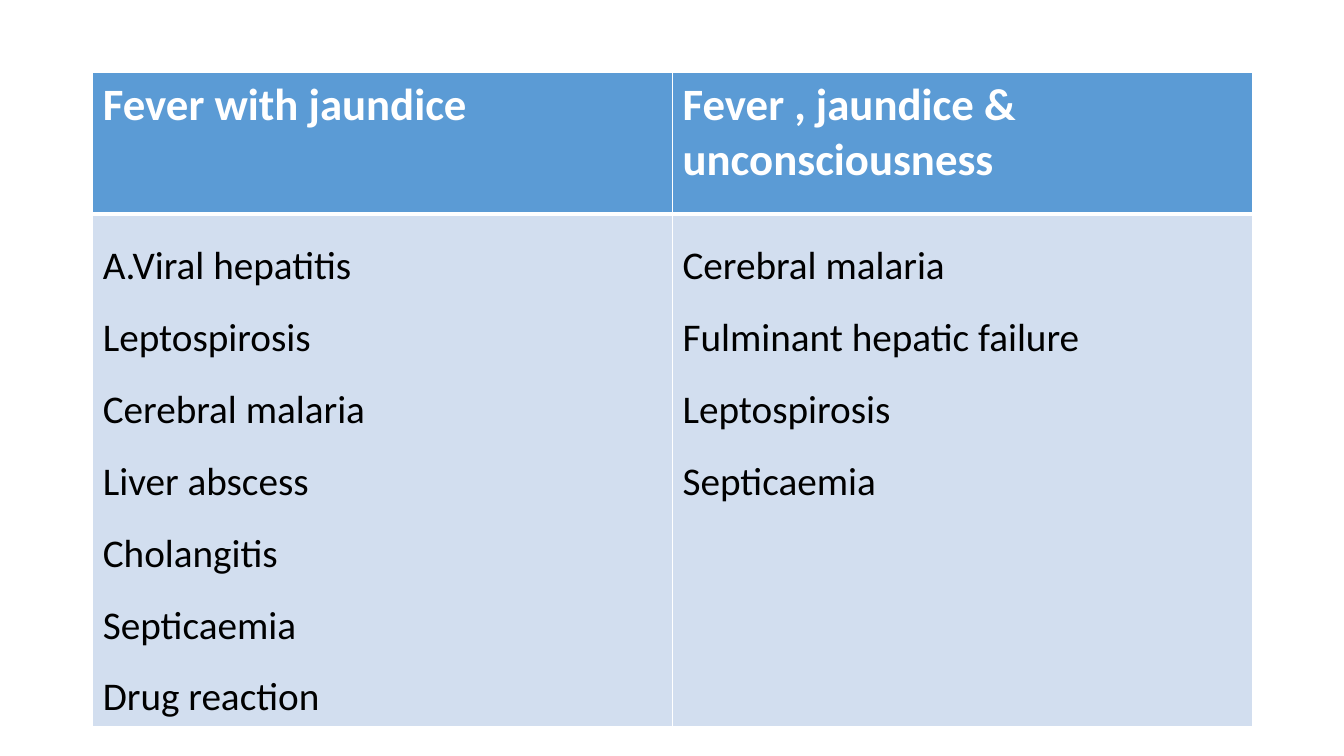
from dataclasses import dataclass

from lxml import etree
from pptx import Presentation, util as u
from pptx.dml.color import RGBColor
from pptx.oxml.ns import qn

WIDE, HIGH = 13.33, 7.5
LEFT, TOP = 0.92, 0.72
COLS = [5.75, 5.75]
ROWS = [1.4, 4.56]
CELLS = [
    [["Fever with jaundice"], ["Fever , jaundice & unconsciousness"]],
    [
        ["A.Viral hepatitis", "Leptospirosis", "Cerebral malaria",
         "Liver abscess", "Cholangitis", "Septicaemia", "Drug reaction"],
        ["Cerebral malaria", "Fulminant hepatic failure",
         "Leptospirosis", "Septicaemia"],
    ],
]


@dataclass(frozen=True)
class Theme:
    font: str = "Calibri"
    line: str = "FFFFFF"
    thin: int = 1
    thick: int = 3


THEME = Theme()
HEAD = dict(size=32, color="FFFFFF", bold=True, space=1.0)
BODY = dict(size=28, color="000000", bold=False, space=1.5)
STYLES = [(HEAD, "5B9BD5"), (BODY, "D2DEEF")]


def write(frame, lines, size, color, bold, space):
    for i, line in enumerate(lines):
        para = frame.paragraphs[0] if i == 0 else frame.add_paragraph()
        para.line_spacing = space
        run = para.add_run()
        run.text = line
        font = run.font
        font.name, font.size, font.bold = THEME.font, u.Pt(size), bold
        font.color.rgb = RGBColor.from_string(color)


def edge(cell, side, width):
    """Draw one border; call for L, R, T, B in turn, before the fill."""
    props = cell._tc.get_or_add_tcPr()
    line = etree.SubElement(props, qn(f"a:ln{side}"), w=str(u.Pt(width)))
    fill = etree.SubElement(line, qn("a:solidFill"))
    etree.SubElement(fill, qn("a:srgbClr"), val=THEME.line)


def main():
    deck = Presentation()
    deck.slide_width, deck.slide_height = u.Inches(WIDE), u.Inches(HIGH)
    slide = deck.slides.add_slide(deck.slide_layouts[6])
    box = [u.Inches(n) for n in (LEFT, TOP, sum(COLS), sum(ROWS))]
    table = slide.shapes.add_table(len(ROWS), len(COLS), *box).table
    for col, width in zip(table.columns, COLS):
        col.width = u.Inches(width)
    for row, height in zip(table.rows, ROWS):
        row.height = u.Inches(height)

    for r, (style, fill) in enumerate(STYLES):
        for c, lines in enumerate(CELLS[r]):
            cell = table.cell(r, c)
            write(cell.text_frame, lines, **style)
            for side in "LRTB":
                rule = (r, side) in ((0, "B"), (1, "T"))
                edge(cell, side, THEME.thick if rule else THEME.thin)
            cell.fill.solid()
            cell.fill.fore_color.rgb = RGBColor.from_string(fill)
    deck.save("out.pptx")


if __name__ == "__main__":
    main()
